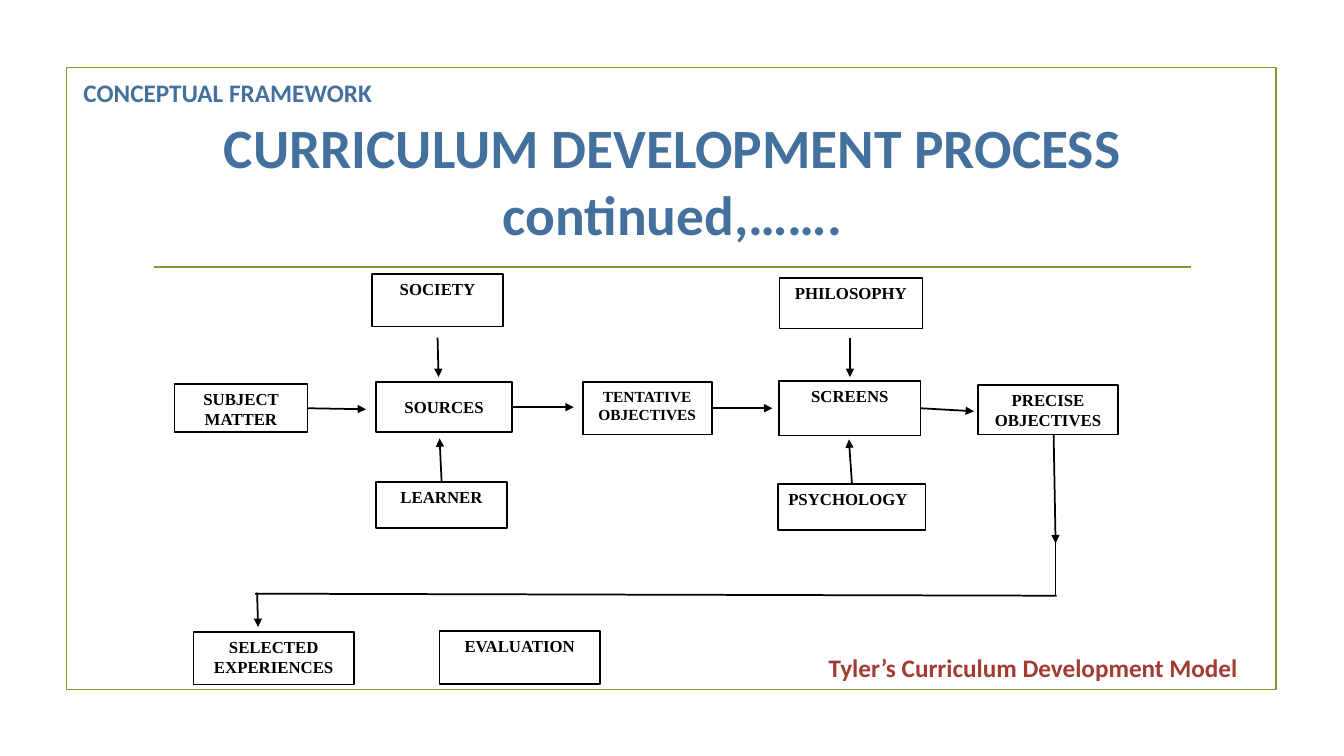
from pptx import Presentation
from pptx.util import Inches, Pt
from pptx.dml.color import RGBColor as RGB
from pptx.enum.shapes import MSO_SHAPE as SHAPE, MSO_CONNECTOR as CONN
from pptx.enum.text import PP_ALIGN as ALIGN, MSO_ANCHOR as ANCHOR
from pptx.oxml.ns import qn
from lxml.etree import SubElement as Sub

HUES = {"frame": "83992A", "head": "44709D", "note": "A23C33",
        "ink": "000000", "paper": "FFFFFF"}
TOP, LEFT, BOTTOM, RIGHT = range(4)

# label: left, top, width, height, changes to the usual format
BOXES = {
    "SUBJECT MATTER": (1.73, 3.81, 1.32, 0.48, {}),
    "SOURCES": (3.73, 3.79, 1.35, 0.5, {"anchor": ANCHOR.MIDDLE}),
    "LEARNER": (3.73, 4.78, 1.3, 0.46, {}),
    "TENTATIVE OBJECTIVES": (5.78, 3.79, 1.28, 0.52, {"size": 11}),
    "PHILOSOPHY": (7.73, 2.76, 1.42, 0.5, {}),
    "SCREENS": (7.73, 3.78, 1.4, 0.54, {}),
    "PSYCHOLOGY": (7.72, 4.8, 1.46, 0.46, {"align": ALIGN.LEFT}),
    "PRECISE OBJECTIVES": (9.7, 3.82, 1.39, 0.49, {}),
    "SELECTED EXPERIENCES": (1.92, 6.27, 1.59, 0.52, {}),
    "EVALUATION": (4.36, 6.26, 1.59, 0.53, {}),
    "SOCIETY": (3.69, 2.72, 1.3, 0.52, {}),
}

# start, end, arrowhead, joined box and its side
LINKS = [
    ((3.05, 4.06), (3.63, 4.06), True, "SUBJECT MATTER", RIGHT),
    ((5.09, 4.04), (5.69, 4.04), True, "SOURCES", RIGHT),
    ((7.07, 4.04), (7.66, 4.05), True, "TENTATIVE OBJECTIVES", RIGHT),
    ((9.15, 4.07), (9.66, 4.08), True, "SCREENS", RIGHT),
    ((4.34, 3.35), (4.35, 3.74), True, None, None),
    ((4.36, 4.78), (4.36, 4.35), True, "LEARNER", TOP),
    ((8.43, 3.35), (8.43, 3.74), True, None, None),
    ((8.43, 4.78), (8.42, 4.36), True, "PSYCHOLOGY", TOP),
    ((10.45, 4.31), (10.47, 5.39), True, None, None),
    ((10.47, 5.36), (10.47, 5.91), False, None, None),
    ((10.48, 5.91), (2.53, 5.89), False, None, None),
    ((2.55, 5.88), (2.56, 6.22), True, None, None),
]


def hue(name):
    return RGB.from_string(HUES[name])


def write(shape, text, color, size, face, align=ALIGN.LEFT,
          anchor=ANCHOR.TOP, after=0):
    frame = shape.text_frame
    frame.word_wrap = True
    frame.vertical_anchor = anchor
    para = frame.paragraphs[0]
    para.alignment = align
    para.space_after = Pt(after)
    run = para.add_run()
    run.text = text
    form = {"name": face, "size": Pt(size), "bold": True}
    for key, value in form.items():
        setattr(run.font, key, value)
    run.font.color.rgb = hue(color)


def add_text(slide, place, *args, **form):
    box = slide.shapes.add_textbox(*map(Inches, place))
    write(box, *args, **form)


def add_rect(slide, place, line, fill=None):
    rect = slide.shapes.add_shape(SHAPE.RECTANGLE, *map(Inches, place))
    rect.shadow.inherit = False
    if fill:
        rect.fill.solid()
        rect.fill.fore_color.rgb = hue(fill)
    else:
        rect.fill.background()
    rect.line.color.rgb = hue(line)
    rect.line.width = Pt(1.25)
    return rect


def add_box(slide, label, place, form):
    rect = add_rect(slide, place, "ink", "paper")
    base = {"size": 12, "align": ALIGN.CENTER, "after": 4}
    write(rect, label, "ink", face="Times New Roman", **{**base, **form})
    return rect


def add_line(slide, start, end, color, arrow=False):
    line = slide.shapes.add_connector(
        CONN.STRAIGHT, *map(Inches, start + end))
    line.line.color.rgb = hue(color)
    line.line.width = Pt(1.25)
    if arrow:
        Sub(line.line._get_or_add_ln(), qn("a:tailEnd"), type="triangle")
    Sub(line._element.spPr, qn("a:effectLst"))
    return line


def main():
    deck = Presentation()
    deck.slide_width, deck.slide_height = Inches(13.33), Inches(7.5)
    slide = deck.slides.add_slide(deck.slide_layouts[6])

    # Frame and headings
    add_rect(slide, (0.66, 0.67, 12, 6.17), "frame")
    add_line(slide, (1.53, 2.65), (11.81, 2.65), "frame")
    add_text(slide, (1.42, 1.07, 10.5, 1.43),
             "CURRICULUM DEVELOPMENT PROCESS continued,…….",
             "head", 39.6, "Calibri", ALIGN.CENTER, ANCHOR.MIDDLE)
    add_text(slide, (0.73, 0.72, 3.2, 0.4), "CONCEPTUAL FRAMEWORK",
             "head", 18, "Calibri")

    # Flow chart
    rects = {label: add_box(slide, label, place, form)
             for label, (*place, form) in BOXES.items()}
    for start, end, arrow, label, side in LINKS:
        line = add_line(slide, start, end, "ink", arrow)
        if label:
            line.begin_connect(rects[label], side)

    # Model name
    add_text(slide, (8.12, 6.42, 4.46, 0.4),
             "Tyler’s Curriculum Development Model", "note", 18, "Calibri")
    deck.save("out.pptx")


if __name__ == "__main__":
    main()
